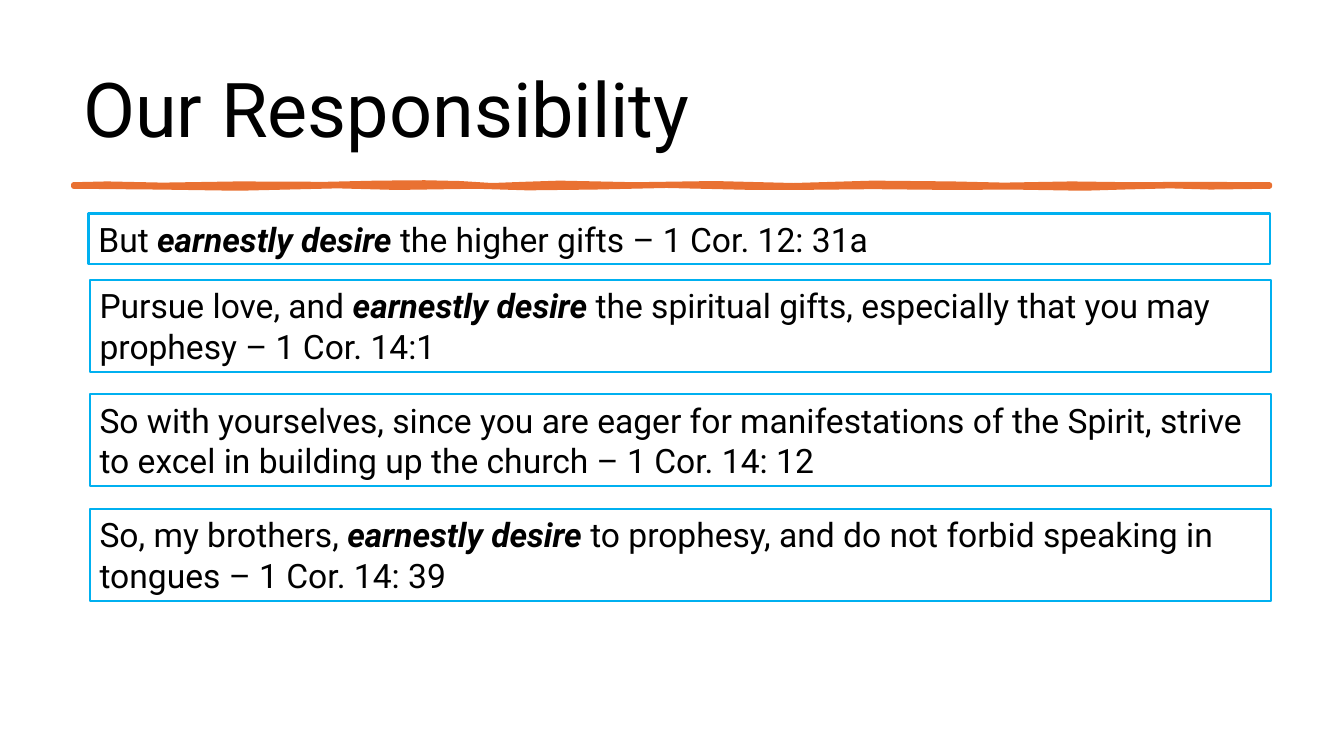
import pptx
import pptx.util
import pptx.dml.color
import pptx.enum.text
from dataclasses import dataclass

Cm, Pt = pptx.util.Cm, pptx.util.Pt
RGB = pptx.dml.color.RGBColor.from_string
MSO_ANCHOR = pptx.enum.text.MSO_ANCHOR
MSO_AUTO_SIZE = pptx.enum.text.MSO_AUTO_SIZE


@dataclass(frozen=True)
class Theme:
    font: str = "Roboto"
    ink: str = "000000"
    accent: str = "E97132"
    border: str = "00B0F0"
    title_size: int = 54
    verse_size: int = 24


theme = Theme()


def style_run(run, size):
    run.font.name = theme.font
    run.font.size = Pt(size)
    run.font.color.rgb = RGB(theme.ink)


deck = pptx.Presentation()
deck.slide_width, deck.slide_height = Cm(33.87), Cm(19.05)
slide = deck.slides.add_slide(deck.slide_layouts[6])

# Title
title = slide.shapes.add_textbox(Cm(1.85), Cm(1.02), Cm(30.15), Cm(3.68)).text_frame
title.word_wrap = True
title.vertical_anchor = MSO_ANCHOR.MIDDLE
title.text = "Our Responsibility"
title.paragraphs[0].line_spacing = 0.9
style_run(title.paragraphs[0].runs[0], theme.title_size)

# Hand-drawn rule: upper edge left to right, lower edge back again
upper_edge = [
    (1.85, 4.65), (2.7, 4.63), (4.1, 4.66), (6, 4.63), (8.2, 4.64), (9.5, 4.61),
    (10.7, 4.6), (11.6, 4.62), (12.4, 4.67), (13.2, 4.64), (14.1, 4.61), (16, 4.65),
    (18, 4.62), (20, 4.67), (22, 4.61), (24, 4.63), (25.3, 4.66), (27, 4.63),
    (28.5, 4.65), (30, 4.64), (32, 4.65),
]
lower_edge = [
    (32, 4.7), (30.5, 4.72), (29.5, 4.69), (28.3, 4.72), (27.3, 4.75), (25.5, 4.72),
    (24, 4.73), (22, 4.71), (20, 4.73), (19, 4.73), (16.8, 4.68), (15, 4.72),
    (13.3, 4.74), (12, 4.7), (10, 4.73), (8.5, 4.69), (6, 4.75), (4, 4.72), (1.85, 4.7),
]
outline = [(Cm(x), Cm(y)) for x, y in upper_edge + lower_edge]
builder = slide.shapes.build_freeform(*outline[0])
builder.add_line_segments(outline[1:], close=True)
rule = builder.convert_to_shape()
rule.shadow.inherit = False
rule.fill.solid()
rule.fill.fore_color.rgb = RGB(theme.accent)
rule.line.color.rgb = RGB(theme.accent)
rule.line.width = Pt(3.25)

# Verses: left, top, height, text; the key phrase is set in bold italic
key_phrase = "earnestly desire"
verses = [
    (2.23, 5.38, 1.28, "But earnestly desire the higher gifts – 1 Cor. 12: 31a"),
    (2.26, 7.06, 2.31, "Pursue love, and earnestly desire the spiritual gifts, "
     "especially that you may prophesy – 1 Cor. 14:1"),
    (2.26, 9.94, 2.31, "So with yourselves, since you are eager for manifestations of "
     "the Spirit, strive to excel in building up the church – 1 Cor. 14: 12"),
    (2.26, 12.83, 2.31, "So, my brothers, earnestly desire to prophesy, and do not "
     "forbid speaking in tongues – 1 Cor. 14: 39"),
]
for left, top, height, wording in verses:
    verse = slide.shapes.add_textbox(Cm(left), Cm(top), Cm(29.77), Cm(height))
    verse.line.color.rgb = RGB(theme.border)
    verse.line.width = Pt(1.5)
    verse.text_frame.word_wrap = True
    verse.text_frame.auto_size = MSO_AUTO_SIZE.SHAPE_TO_FIT_TEXT
    paragraph = verse.text_frame.paragraphs[0]
    for part in wording.partition(key_phrase):
        if part:
            run = paragraph.add_run()
            run.text = part
            style_run(run, theme.verse_size)
            run.font.bold = run.font.italic = part == key_phrase

deck.save("out.pptx")
